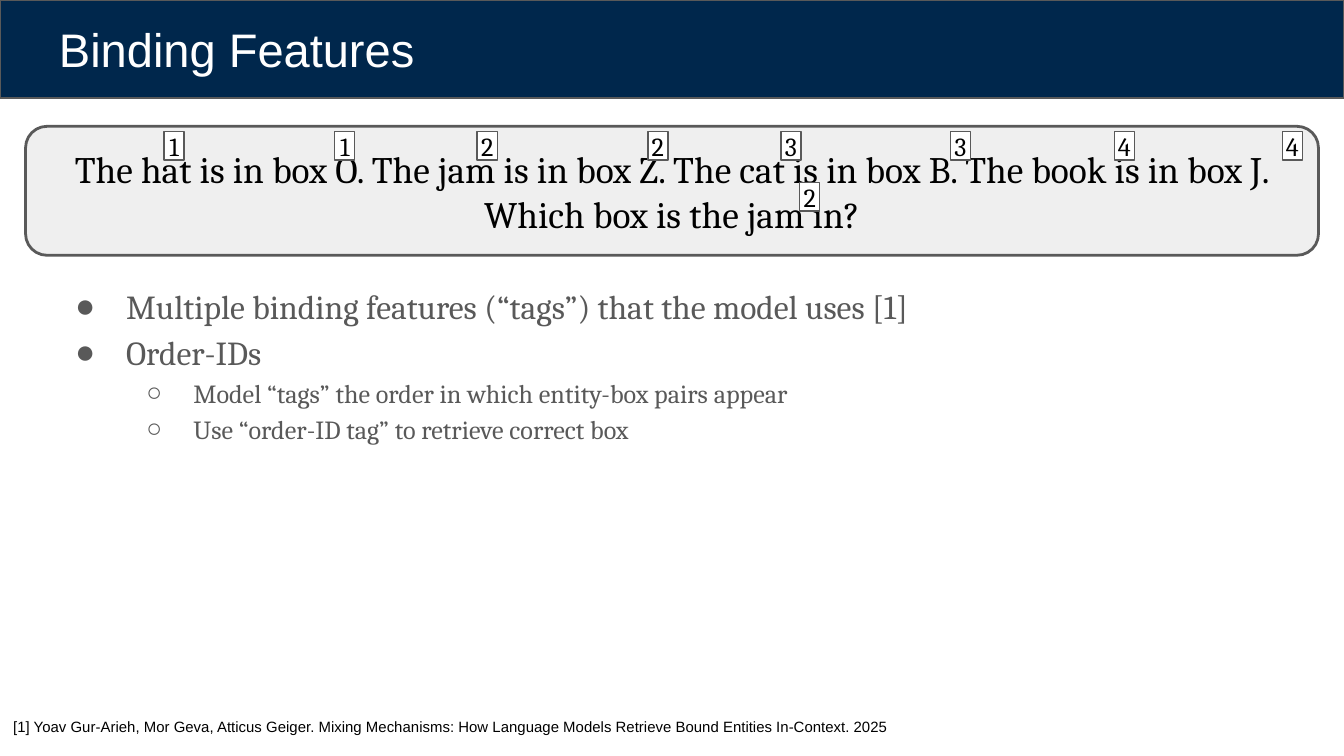
from dataclasses import dataclass

from lxml import etree
from pptx import Presentation
from pptx.dml.color import RGBColor
from pptx.enum.shapes import MSO_SHAPE
from pptx.enum.text import MSO_ANCHOR, PP_ALIGN
from pptx.oxml.ns import qn
from pptx.shapes.autoshape import Shape
from pptx.slide import Slide
from pptx.text.text import TextFrame, _Paragraph
from pptx.util import Inches, Pt

RECTANGLE, ROUNDED = MSO_SHAPE.RECTANGLE, MSO_SHAPE.ROUNDED_RECTANGLE
TOP, MIDDLE = MSO_ANCHOR.TOP, MSO_ANCHOR.MIDDLE
LEFT, CENTER = PP_ALIGN.LEFT, PP_ALIGN.CENTER

COLOURS = {
    "navy": "00274C",
    "grey": "595959",
    "panel": "EFEFEF",
    "white": "FFFFFF",
    "black": "000000",
}
SERIF, SANS = "Cambria", "Arial"
SLIDE_WIDTH = 10
SLIDE_HEIGHT = SLIDE_WIDTH * 9 / 16


@dataclass(frozen=True)
class Area:
    left: float
    top: float
    width: float
    height: float


@dataclass(frozen=True)
class Style:
    size: float
    font: str
    colour: str


@dataclass(frozen=True)
class Bullet:
    text: str
    level: int = 0


@dataclass(frozen=True)
class BulletLevel:
    symbol: str
    margin: float
    hanging: float
    style: Style


@dataclass(frozen=True)
class OrderTag:
    label: str
    left: float
    top: float = 0.98


TITLE_STYLE = Style(25.2, SANS, "white")
PROMPT_STYLE = Style(20, SERIF, "black")
TAG_STYLE = Style(14, SERIF, "black")
CITATION_STYLE = Style(8, SANS, "black")

BULLET_LEVELS = [
    BulletLevel("●", 0.5, 0.38, Style(18, SERIF, "grey")),
    BulletLevel("○", 1.0, 0.35, Style(14, SERIF, "grey")),
]
BULLETS = [
    Bullet("Multiple binding features (“tags”) that the model uses [1]"),
    Bullet("Order-IDs"),
    Bullet("Model “tags” the order in which entity-box pairs appear", 1),
    Bullet("Use “order-ID tag” to retrieve correct box", 1),
]
PROMPT = (
    "The hat is in box O. The jam is in box Z. The cat is in box B. "
    "The book is in box J. Which box is the jam in?"
)
CITATION = (
    "[1] Yoav Gur-Arieh, Mor Geva, Atticus Geiger. Mixing Mechanisms: "
    "How Language Models Retrieve Bound Entities In-Context. 2025"
)
ORDER_TAGS = [
    OrderTag("1", 1.22),
    OrderTag("1", 2.49),
    OrderTag("2", 3.55),
    OrderTag("2", 4.82),
    OrderTag("3", 5.81),
    OrderTag("3", 7.07),
    OrderTag("4", 8.29),
    OrderTag("4", 9.54),
    OrderTag("2", 5.95, 1.36),
]


def colour(name: str) -> RGBColor:
    return RGBColor.from_string(COLOURS[name])


def place(area: Area) -> list[Inches]:
    return [Inches(n) for n in (area.left, area.top, area.width, area.height)]


def prepare_frame(frame: TextFrame, anchor: MSO_ANCHOR, side: float = 0.1) -> None:
    frame.word_wrap = True
    frame.vertical_anchor = anchor
    frame.margin_left = frame.margin_right = Inches(side)
    frame.margin_top = frame.margin_bottom = Inches(0.1)


def add_span(para: _Paragraph, text: str, style: Style) -> None:
    span = para.add_run()
    span.text = text
    span.font.size = Pt(style.size)
    span.font.name = style.font
    span.font.color.rgb = colour(style.colour)


def write_line(frame: TextFrame, text: str, style: Style, align: PP_ALIGN) -> None:
    para = frame.paragraphs[0]
    para.alignment = align
    add_span(para, text, style)


def add_panel(slide: Slide, kind: MSO_SHAPE, area: Area, fill: str, line: float) -> Shape:
    panel = slide.shapes.add_shape(kind, *place(area))
    panel.shadow.inherit = False
    panel.fill.solid()
    panel.fill.fore_color.rgb = colour(fill)
    panel.line.color.rgb = colour("grey")
    panel.line.width = Pt(line)
    return panel


def add_text(slide: Slide, area: Area, text: str, style: Style, anchor: MSO_ANCHOR) -> None:
    frame = slide.shapes.add_textbox(*place(area)).text_frame
    prepare_frame(frame, anchor)
    write_line(frame, text, style, LEFT)


def set_bullet(para: _Paragraph, level: BulletLevel) -> None:
    properties = para._p.get_or_add_pPr()
    properties.set("marL", str(Inches(level.margin)))
    properties.set("indent", str(-Inches(level.hanging)))
    bullet_colour = etree.SubElement(properties, qn("a:buClr"))
    etree.SubElement(bullet_colour, qn("a:srgbClr"), val=COLOURS[level.style.colour])
    etree.SubElement(properties, qn("a:buFont"), typeface=SANS)
    etree.SubElement(properties, qn("a:buChar"), char=level.symbol)


def add_bullets(slide: Slide, area: Area, bullets: list[Bullet]) -> None:
    frame = slide.shapes.add_textbox(*place(area)).text_frame
    prepare_frame(frame, TOP)
    for index, bullet in enumerate(bullets):
        para = frame.add_paragraph() if index else frame.paragraphs[0]
        level = BULLET_LEVELS[bullet.level]
        set_bullet(para, level)
        para.level = bullet.level
        para.line_spacing = 1.15
        add_span(para, bullet.text, level.style)


def add_order_tag(slide: Slide, tag: OrderTag) -> None:
    box = add_panel(slide, RECTANGLE, Area(tag.left, tag.top, 0.15, 0.21), "white", 0.75)
    prepare_frame(box.text_frame, MIDDLE, side=0)
    write_line(box.text_frame, tag.label, TAG_STYLE, CENTER)


def main() -> None:
    deck = Presentation()
    deck.slide_width = Inches(SLIDE_WIDTH)
    deck.slide_height = Inches(SLIDE_HEIGHT)
    page = deck.slides.add_slide(deck.slide_layouts[6])

    add_panel(page, RECTANGLE, Area(0, 0, SLIDE_WIDTH, 0.73), "navy", 0.75)
    add_text(page, Area(0.34, 0.05, 9.32, 0.63), "Binding Features", TITLE_STYLE, MIDDLE)
    add_bullets(page, Area(0.34, 1.98, 9.32, 3.28), BULLETS)

    prompt = add_panel(page, ROUNDED, Area(0.19, 0.94, 9.62, 0.96), "panel", 1.5)
    prepare_frame(prompt.text_frame, MIDDLE)
    write_line(prompt.text_frame, PROMPT, PROMPT_STYLE, CENTER)

    add_text(page, Area(0, 5.27, SLIDE_WIDTH, 0.34), CITATION, CITATION_STYLE, TOP)
    for tag in ORDER_TAGS:
        add_order_tag(page, tag)

    deck.save("out.pptx")


if __name__ == "__main__":
    main()
